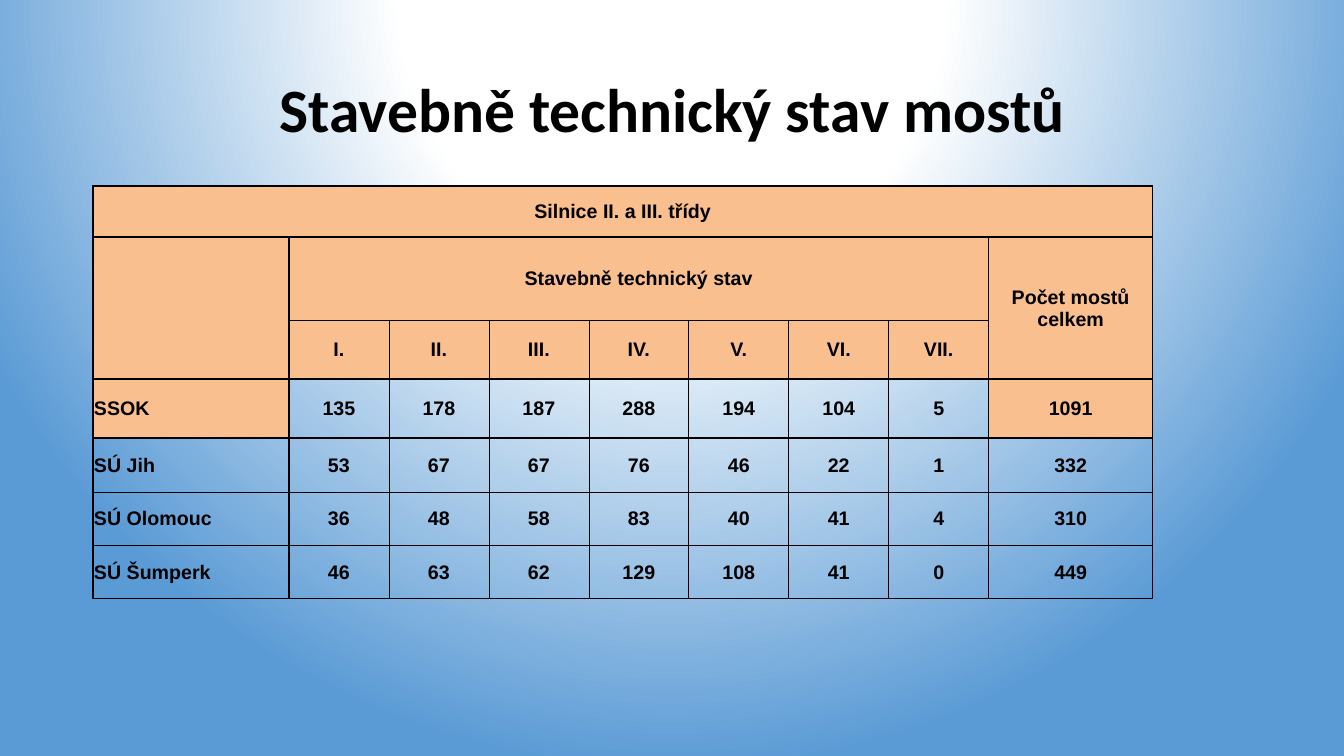
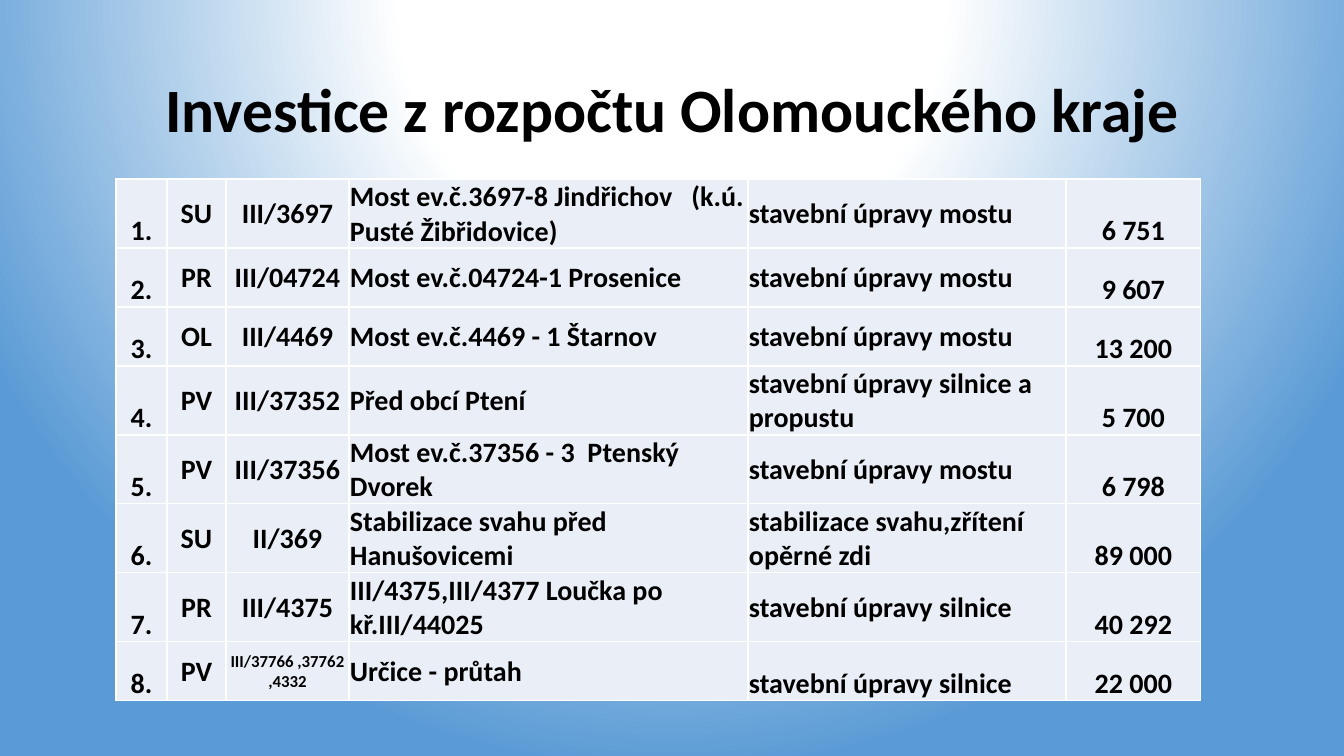
from lxml import etree
from pptx import Presentation
from pptx.dml.color import RGBColor
from pptx.enum.text import MSO_ANCHOR, PP_ALIGN
from pptx.oxml import parse_xml
from pptx.oxml.ns import nsdecls, qn
from pptx.util import Emu, Pt

LEFT, CENTER = PP_ALIGN.LEFT, PP_ALIGN.CENTER
MIDDLE, BOTTOM = MSO_ANCHOR.MIDDLE, MSO_ANCHOR.BOTTOM

BLACK = RGBColor(0x00, 0x00, 0x00)
WHITE = RGBColor(0xFF, 0xFF, 0xFF)
SKY = RGBColor(0x5B, 0x9B, 0xD5)
PEACH = RGBColor(0xFA, 0xBF, 0x8F)
MIST = RGBColor(0xEA, 0xEF, 0xF7)

PAGE_WIDTH, PAGE_HEIGHT = 1344, 756
EMU_PER_PX = 12192000 / PAGE_WIDTH
BLANK_LAYOUT = 6
PLAIN_TABLE = "{2D5ABB26-0587-4C30-8999-92F81FD0307C}"
THIN, THICK = 0.5, 1

BRIDGE_ROWS = [
    ["Silnice II. a III. třídy"] + [""] * 8,
    ["", "Stavebně technický stav"] + [""] * 6 + ["Počet mostů celkem"],
    ["", "I.", "II.", "III.", "IV.", "V.", "VI.", "VII.", ""],
    ["SSOK", "135", "178", "187", "288", "194", "104", "5", "1091"],
    ["SÚ Jih", "53", "67", "67", "76", "46", "22", "1", "332"],
    ["SÚ Olomouc", "36", "48", "58", "83", "40", "41", "4", "310"],
    ["SÚ Šumperk", "46", "63", "62", "129", "108", "41", "0", "449"],
]
BRIDGE_MERGES = [(0, 0, 0, 8), (1, 0, 2, 0), (1, 1, 1, 7), (1, 8, 2, 8)]
THICK_ROW_LINES = {0, 1, 3, 4, 7}
THICK_COLUMN_LINES = {0, 1, 8, 9}

INVESTMENT_ROWS = [
    ["1.", "SU", "III/3697", "Most ev.č.3697-8 Jindřichov   (k.ú. Pusté Žibřidovice)",
     "stavební úpravy mostu", "6 751"],
    ["2.", "PR", "III/04724", "Most ev.č.04724-1 Prosenice", "stavební úpravy mostu", "9 607"],
    ["3.", "OL", "III/4469", "Most ev.č.4469 - 1 Štarnov", "stavební úpravy mostu", "13 200"],
    ["4.", "PV", "III/37352", "Před obcí Ptení", "stavební úpravy silnice a  propustu", "5 700"],
    ["5.", "PV", "III/37356", "Most ev.č.37356 - 3  Ptenský Dvorek",
     "stavební úpravy mostu", "6 798"],
    ["6.", "SU", "II/369", "Stabilizace svahu před Hanušovicemi",
     "stabilizace svahu,zřítení opěrné zdi", "89 000"],
    ["7.", "PR", "III/4375", "III/4375,III/4377 Loučka po kř.III/44025",
     "stavební úpravy silnice", "40 292"],
    ["8.", "PV", "III/37766 ,37762 ,4332", "Určice - průtah", "stavební úpravy silnice", "22 000"],
]
BOTTOM_CELLS = {(5, 4), (7, 4)}


def px(length):
    return Emu(round(length * EMU_PER_PX))


class Slides:
    def __init__(self):
        self.deck = Presentation()
        self.deck.slide_width = px(PAGE_WIDTH)
        self.deck.slide_height = px(PAGE_HEIGHT)
        self.page = None
        self.set_background()

    def set_background(self):
        stops = "".join(
            f'<a:gs pos="{percent * 1000}"><a:srgbClr val="{color}"/></a:gs>'
            for percent, color in ((0, WHITE), (35, WHITE), (100, SKY)))
        content = self.deck.slide_master.element.find(qn("p:cSld"))
        for old in content.findall(qn("p:bg")):
            content.remove(old)
        content.insert(0, parse_xml(
            f'<p:bg {nsdecls("p", "a")}><p:bgPr><a:gradFill rotWithShape="1">'
            f'<a:gsLst>{stops}</a:gsLst><a:path path="circle">'
            '<a:fillToRect l="50000" t="-80000" r="50000" b="180000"/>'
            '</a:path></a:gradFill><a:effectLst/></p:bgPr></p:bg>'))

    def add_page(self, title):
        self.page = self.deck.slides.add_slide(self.deck.slide_layouts[BLANK_LAYOUT])
        box = self.page.shapes.add_textbox(px(93), px(40), px(1159), px(146))
        frame = box.text_frame
        frame.word_wrap = True
        frame.vertical_anchor = MIDDLE
        frame.text = title
        frame.paragraphs[0].line_spacing = 0.9
        self.style_text(frame, "Calibri", 44, CENTER)

    def style_text(self, frame, font, size, align):
        for para in frame.paragraphs:
            para.alignment = align
            for span in para.runs:
                span.font.name = font
                span.font.size = Pt(size)
                span.font.bold = True
                span.font.color.rgb = BLACK

    def add_table(self, left, top, widths, heights, rows, style_cell, merges=()):
        graphic = self.page.shapes.add_table(
            len(rows), len(widths), px(left), px(top), px(sum(widths)), px(sum(heights)))
        table = graphic.table
        table.first_row = table.horz_banding = False
        for style in graphic.element.iter(qn("a:tableStyleId")):
            style.text = PLAIN_TABLE
        for column, width in zip(table.columns, widths):
            column.width = px(width)
        for row, height in zip(table.rows, heights):
            row.height = px(height)
        for row, texts in enumerate(rows):
            for column, text in enumerate(texts):
                cell = table.cell(row, column)
                cell.text_frame.text = text
                cell.margin_left = cell.margin_right = cell.margin_top = px(1)
                cell.margin_bottom = 0
                style_cell(cell, row, column)
        for first_row, first_column, last_row, last_column in merges:
            table.cell(first_row, first_column).merge(table.cell(last_row, last_column))

    def set_borders(self, cell, color, left, right, top, bottom):
        properties = cell._tc.get_or_add_tcPr()
        for side, points in zip("LRTB", (left, right, top, bottom)):
            line = etree.SubElement(properties, qn(f"a:ln{side}"), w=str(Pt(points)))
            fill = etree.SubElement(line, qn("a:solidFill"))
            etree.SubElement(fill, qn("a:srgbClr"), val=str(color))

    def fill_cell(self, cell, color):
        if color is None:
            cell.fill.background()
        else:
            cell.fill.solid()
            cell.fill.fore_color.rgb = color

    def style_bridge_cell(self, cell, row, column):
        sides = [THICK if line in THICK_COLUMN_LINES else THIN for line in (column, column + 1)]
        sides += [THICK if line in THICK_ROW_LINES else THIN for line in (row, row + 1)]
        self.set_borders(cell, BLACK, *sides)
        shaded = row < 3 or (row == 3 and column in (0, 8))
        self.fill_cell(cell, PEACH if shaded else None)
        cell.vertical_anchor = MIDDLE
        align = LEFT if row >= 3 and column == 0 else CENTER
        self.style_text(cell.text_frame, "Arial", 14, align)

    def style_investment_cell(self, cell, row, column):
        self.set_borders(cell, WHITE, *[THICK] * 4)
        self.fill_cell(cell, MIST)
        low = column in (0, 5) or (row, column) in BOTTOM_CELLS
        cell.vertical_anchor = BOTTOM if low else MIDDLE
        size = 12 if (row, column) == (7, 2) else 20
        self.style_text(cell.text_frame, "Calibri", size, LEFT if column in (3, 4) else CENTER)


def main():
    slides = Slides()
    slides.add_page("Stavebně technický stav mostů")
    slides.add_table(93, 186, [196] + [100] * 7 + [164], [51, 83, 59, 59, 54, 53, 54],
                     BRIDGE_ROWS, slides.style_bridge_cell, BRIDGE_MERGES)
    slides.add_page("Investice z rozpočtu Olomouckého kraje")
    slides.add_table(116, 179, [51, 59, 123, 399, 318, 135], [69, 59, 59, 69, 69, 69, 69, 59],
                     INVESTMENT_ROWS, slides.style_investment_cell)
    slides.deck.save("out.pptx")


if __name__ == "__main__":
    main()
